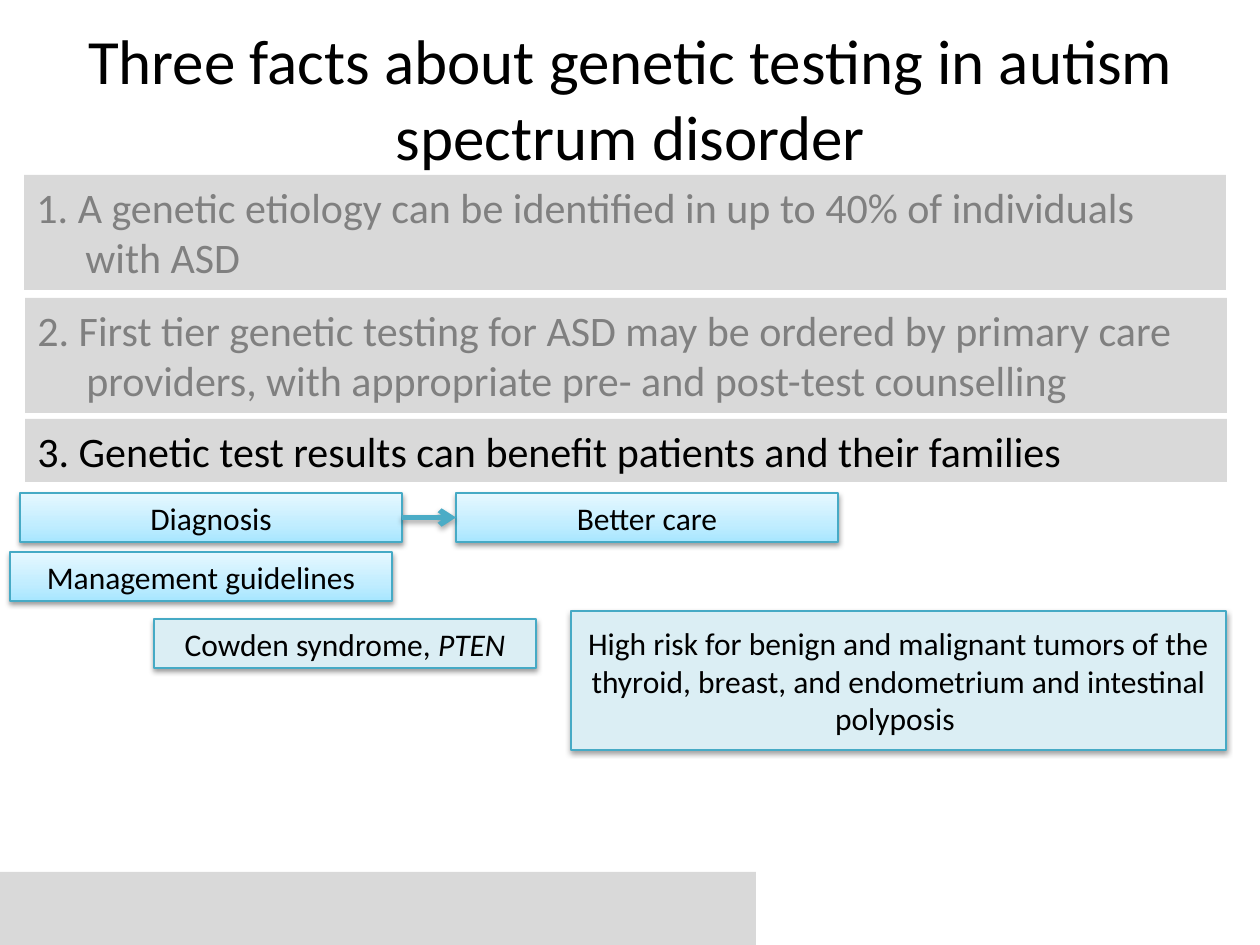
from pptx import Presentation
from pptx import util as u
from pptx.dml.color import RGBColor
from pptx.enum import shapes, text
from pptx.oxml import parse_xml
from pptx.oxml.ns import nsdecls, qn
from copy import deepcopy

PX = 914400 / 126
COLORS = {"black": "000000", "muted": "808080", "grey": "D9D9D9",
          "pale": "DBEEF4", "border": "46AAC5", "arrow": "4BACC6"}
STOPS = [(0, "A7E6FF"), (0.35, "C1EDFF"), (1, "E7F8FF")]
FACT = {"size": 24, "color": "muted", "align": "LEFT", "anchor": "TOP"}
LABEL = {"size": 18, "color": "black", "align": "CENTER", "anchor": "MIDDLE"}
TITLE = {**LABEL, "size": 36}


def write(sp, runs, style):
    tf = sp.text_frame
    formats = {"word_wrap": True,
               "vertical_anchor": text.MSO_ANCHOR[style["anchor"]]}
    for name, value in formats.items():
        setattr(tf, name, value)
    p = tf.paragraphs[0]
    p.alignment = text.PP_ALIGN[style["align"]]
    for words, italic in runs:
        r = p.add_run()
        r.text = words
        font = {"name": "Calibri", "size": u.Pt(style["size"]), "italic": italic}
        for name, value in font.items():
            setattr(r.font, name, value)
        r.font.color.rgb = RGBColor.from_string(COLORS[style["color"]])


def add_shadow(sp, alpha, dist):
    sp._element.spPr.append(parse_xml(
        f'<a:effectLst {nsdecls("a")}><a:outerShdw blurRad="40000" dist="{dist}" '
        f'dir="5400000" rotWithShape="0"><a:srgbClr val="000000">'
        f'<a:alpha val="{alpha}000"/></a:srgbClr></a:outerShdw></a:effectLst>'))


prs = Presentation()
prs.slide_width, prs.slide_height = u.Inches(10), u.Inches(7.5)
s = prs.slides.add_slide(prs.slide_layouts[6])

bars = [
    ((0, 872, 756, 73), "", FACT, False),
    ((25, 419, 1202, 63), "3. Genetic test results can benefit patients and their families",
     {**FACT, "color": "black"}, False),
    ((25, 298, 1202, 115), "2. First tier genetic testing for ASD may be ordered by primary care "
     "providers, with appropriate pre- and post-test counselling", FACT, True),
    ((24, 175, 1202, 115), "1. A genetic etiology can be identified in up to 40% of individuals "
     "with ASD", FACT, True),
]
for box, words, style, hanging in bars:
    sp = s.shapes.add_shape(shapes.MSO_SHAPE.RECTANGLE, *(round(v * PX) for v in box))
    sp.shadow.inherit = False
    sp.fill.solid()
    sp.fill.fore_color.rgb = RGBColor.from_string(COLORS["grey"])
    sp.line.fill.background()
    if words:
        write(sp, [(words, False)], style)
        sp.text_frame.auto_size = text.MSO_AUTO_SIZE.SHAPE_TO_FIT_TEXT
    if hanging:
        pPr = sp.text_frame.paragraphs[0]._p.get_or_add_pPr()
        for name, value in {"marL": 49, "indent": -49}.items():
            pPr.set(name, str(round(value * PX)))

sp = s.shapes.add_textbox(*(round(v * PX) for v in (54, 18, 1153, 158)))
write(sp, [("Three facts about genetic testing in autism spectrum disorder", False)], TITLE)

labels = {
    "diagnosis": ((20, 493, 382, 49), [("Diagnosis", False)], True),
    "care": ((456, 493, 382, 49), [("Better care", False)], True),
    "guidelines": ((10, 552, 382, 49), [("Management guidelines", False)], True),
    "syndrome": ((154, 619, 382, 49), [("Cowden syndrome, ", False), ("PTEN", True)], False),
    "risk": ((571, 611, 655, 139), [("High risk for benign and malignant tumors of the thyroid, "
             "breast, and endometrium and intestinal polyposis ", False)], False),
}
boxes = {}
for name, (box, runs, shaded) in labels.items():
    sp = s.shapes.add_shape(shapes.MSO_SHAPE.RECTANGLE, *(round(v * PX) for v in box))
    if shaded:
        sp.fill.gradient()
        sp.fill.gradient_angle = 90
        stops = sp._element.spPr.find(".//" + qn("a:gsLst"))
        stops.append(deepcopy(stops[-1]))
        for stop, (position, color) in zip(sp.fill.gradient_stops, STOPS):
            stop.position = position
            stop.color.rgb = RGBColor.from_string(color)
    else:
        sp.fill.solid()
        sp.fill.fore_color.rgb = RGBColor.from_string(COLORS["pale"])
    sp.line.color.rgb = RGBColor.from_string(COLORS["border"])
    sp.line.width = u.Pt(0.75)
    add_shadow(sp, 38, 20000)
    write(sp, runs, LABEL)
    boxes[name] = sp

arrow = s.shapes.add_connector(shapes.MSO_CONNECTOR.STRAIGHT, 0, 0, 0, 0)
arrow.begin_connect(boxes["diagnosis"], 3)
arrow.end_connect(boxes["care"], 1)
arrow.line.color.rgb = RGBColor.from_string(COLORS["arrow"])
arrow.line.width = u.Pt(3)
arrow.line._get_or_add_ln().append(parse_xml(f'<a:tailEnd {nsdecls("a")} type="arrow"/>'))
add_shadow(arrow, 35, 23000)

prs.save("out.pptx")
